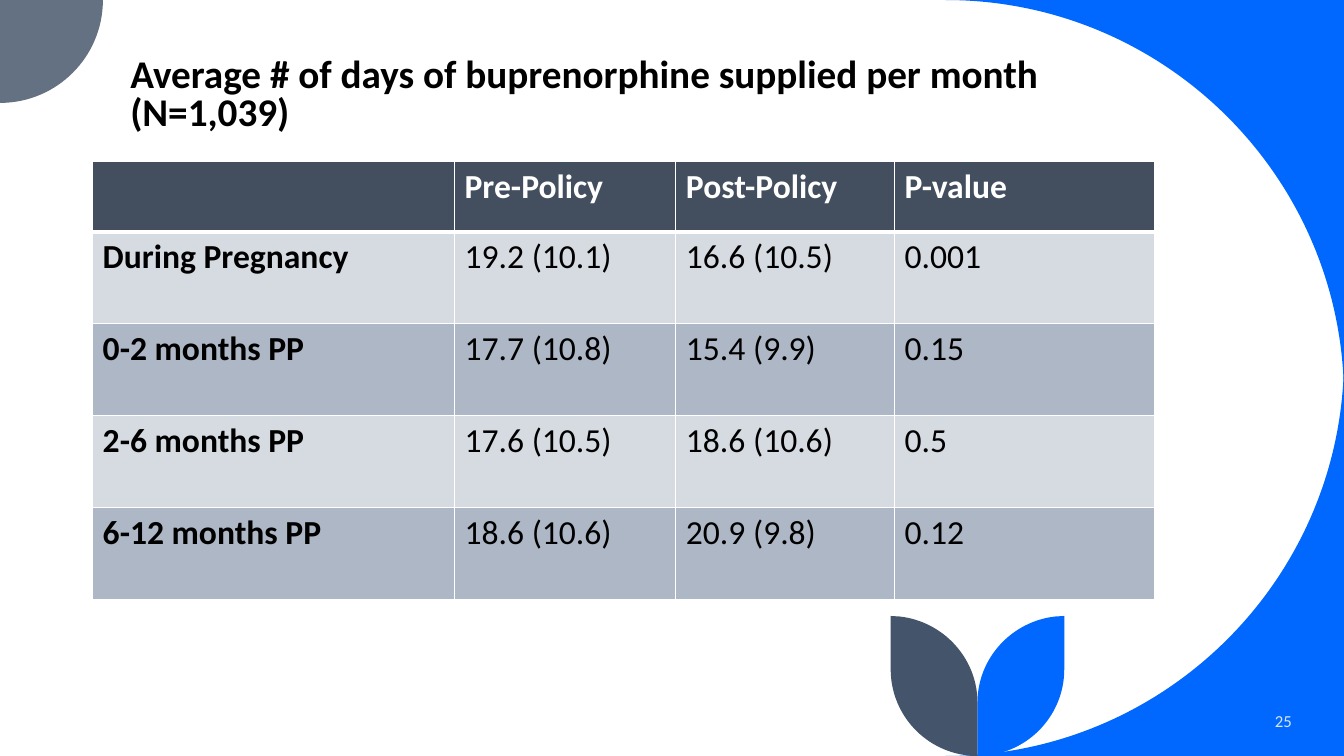
"""Builds the slide on average days of buprenorphine supplied per month."""
from lxml.etree import SubElement
from pptx import Presentation
from pptx.dml.color import RGBColor
from pptx.enum.text import MSO_ANCHOR, PP_ALIGN
from pptx.oxml.ns import qn
from pptx.util import Pt

TITLE = "Average # of days of buprenorphine supplied per month (N=1,039)"
PAGE_NUMBER = "25"
ROWS = [
    ("", "Pre-Policy", "Post-Policy", "P-value"),
    ("During Pregnancy", "19.2 (10.1)", "16.6 (10.5)", "0.001"),
    ("0-2 months PP", "17.7 (10.8)", "15.4 (9.9)", "0.15"),
    ("2-6 months PP", "17.6 (10.5)", "18.6 (10.6)", "0.5"),
    ("6-12 months PP", "18.6 (10.6)", "20.9 (9.8)", "0.12"),
]
THEME = {
    "font": "Calibri",
    "title_size": 28, "table_size": 24, "number_size": 12,
    "blue": "0068FF", "slate": "637183", "navy": "44546A",
    "header": "434E5E", "bands": ("D6DBE2", "ADB7C5"),
    "ink": "000000", "white": "FFFFFF", "number": "DAE5EF",
}
WIDTH, HEIGHT = 960, 540
TITLE_BOX = (86, 5.8, 729.4, 93.6)
NUMBER_BOX = (799.5, 500.4, 130.3, 28.8)
TABLE_LEFT, TABLE_TOP = 66.2, 115.5
COLUMN_WIDTHS = (258.5, 158.1, 156.2, 185.8)
HEADER_HEIGHT, BODY_HEIGHT = 50, 65.7
THIN, THICK = 1, 3
STEM = 698.2

CORNER = [(960, 0), (675.5, 0), (832.6, 0, 960, 127.4, 960, 284.5)]
DISC = [(0, 0), (73.5, 0), (73.5, 40.6, 40.6, 73.5, 0, 73.5)]
LEAF = [
    (760.2, 440), (760.2, 478.1), (760.2, 512.3, 732.4, 540, STEM, 540),
    (STEM, 501.8), (STEM, 470.2, 722.7, 443.8, 753.8, 440.4),
]


def mirror(outline, axis, total):
    """Reflects the x (axis 0) or y (axis 1) values of an outline."""
    return [tuple(total - value if index % 2 == axis else value
                  for index, value in enumerate(step)) for step in outline]


def add_outline(page, outline, color):
    """Draws one filled outline; steps of six values become cubic curves."""
    points = [(Pt(step[index]), Pt(step[index + 1]))
              for step in outline for index in range(0, len(step), 2)]
    builder = page.shapes.build_freeform(*points[0])
    builder.add_line_segments(points[1:], close=True)
    shape = builder.convert_to_shape()
    segments = iter(list(shape.element.iter(qn("a:lnTo"))))
    for step in outline[1:]:
        segment = next(segments)
        if len(step) == 6:
            curve = segment.makeelement(qn("a:cubicBezTo"))
            segment.addprevious(curve)
            for part in (segment, next(segments), next(segments)):
                curve.append(part[0])
                part.getparent().remove(part)
    shape.shadow.inherit = False
    shape.fill.solid()
    shape.fill.fore_color.rgb = RGBColor.from_string(color)
    shape.line.fill.background()


def write(frame, text, size, color, bold=False, **layout):
    """Writes one paragraph with its character and paragraph formats."""
    para = frame.paragraphs[0]
    for name, value in layout.items():
        setattr(para, name, value)
    span = para.add_run()
    span.text = text
    formats = {"name": THEME["font"], "size": Pt(size), "bold": bold}
    for name, value in formats.items():
        setattr(span.font, name, value)
    span.font.color.rgb = RGBColor.from_string(color)


def add_text(page, bounds, anchor, *content, **layout):
    """Adds a wrapped text box."""
    frame = page.shapes.add_textbox(*map(Pt, bounds)).text_frame
    for name, value in {"word_wrap": True, "vertical_anchor": anchor}.items():
        setattr(frame, name, value)
    write(frame, *content, **layout)


def set_borders(cell, row):
    """Gives a cell white borders, thick under the header."""
    widths = {"L": THIN, "R": THIN, "T": THICK if row == 1 else THIN,
              "B": THICK if row == 0 else THIN}
    properties = cell._tc.get_or_add_tcPr()
    for side, width in widths.items():
        line = SubElement(properties, qn(f"a:ln{side}"), w=str(Pt(width)))
        fill = SubElement(line, qn("a:solidFill"))
        SubElement(fill, qn("a:srgbClr"), val=THEME["white"])


def add_supply_table(page):
    """Adds the table of days supplied before and after the policy."""
    heights = [HEADER_HEIGHT] + [BODY_HEIGHT] * (len(ROWS) - 1)
    bounds = (TABLE_LEFT, TABLE_TOP, sum(COLUMN_WIDTHS), sum(heights))
    table = page.shapes.add_table(len(ROWS), len(COLUMN_WIDTHS), *map(Pt, bounds)).table
    for column, width in zip(table.columns, COLUMN_WIDTHS):
        column.width = Pt(width)
    for row, (texts, height) in enumerate(zip(ROWS, heights)):
        table.rows[row].height = Pt(height)
        is_header = row == 0
        background = THEME["header"] if is_header else THEME["bands"][(row - 1) % 2]
        color = THEME["white"] if is_header else THEME["ink"]
        for column, text in enumerate(texts):
            cell = table.cell(row, column)
            set_borders(cell, row)
            cell.fill.solid()
            cell.fill.fore_color.rgb = RGBColor.from_string(background)
            if text:
                write(cell.text_frame, text, THEME["table_size"], color,
                      is_header or column == 0)


def main():
    """Builds and saves the deck."""
    deck = Presentation()
    deck.slide_width, deck.slide_height = Pt(WIDTH), Pt(HEIGHT)
    page = deck.slides.add_slide(deck.slide_layouts[6])
    decorations = [
        (CORNER, "blue"), (mirror(CORNER, 1, HEIGHT), "blue"), (DISC, "slate"),
        (LEAF, "blue"), (mirror(LEAF, 0, 2 * STEM), "navy"),
    ]
    for outline, color in decorations:
        add_outline(page, outline, THEME[color])
    add_text(page, TITLE_BOX, MSO_ANCHOR.BOTTOM, TITLE, THEME["title_size"],
             THEME["ink"], True, line_spacing=0.8)
    add_supply_table(page)
    add_text(page, NUMBER_BOX, MSO_ANCHOR.MIDDLE, PAGE_NUMBER, THEME["number_size"],
             THEME["number"], alignment=PP_ALIGN.RIGHT)
    deck.save("out.pptx")


if __name__ == "__main__":
    main()
